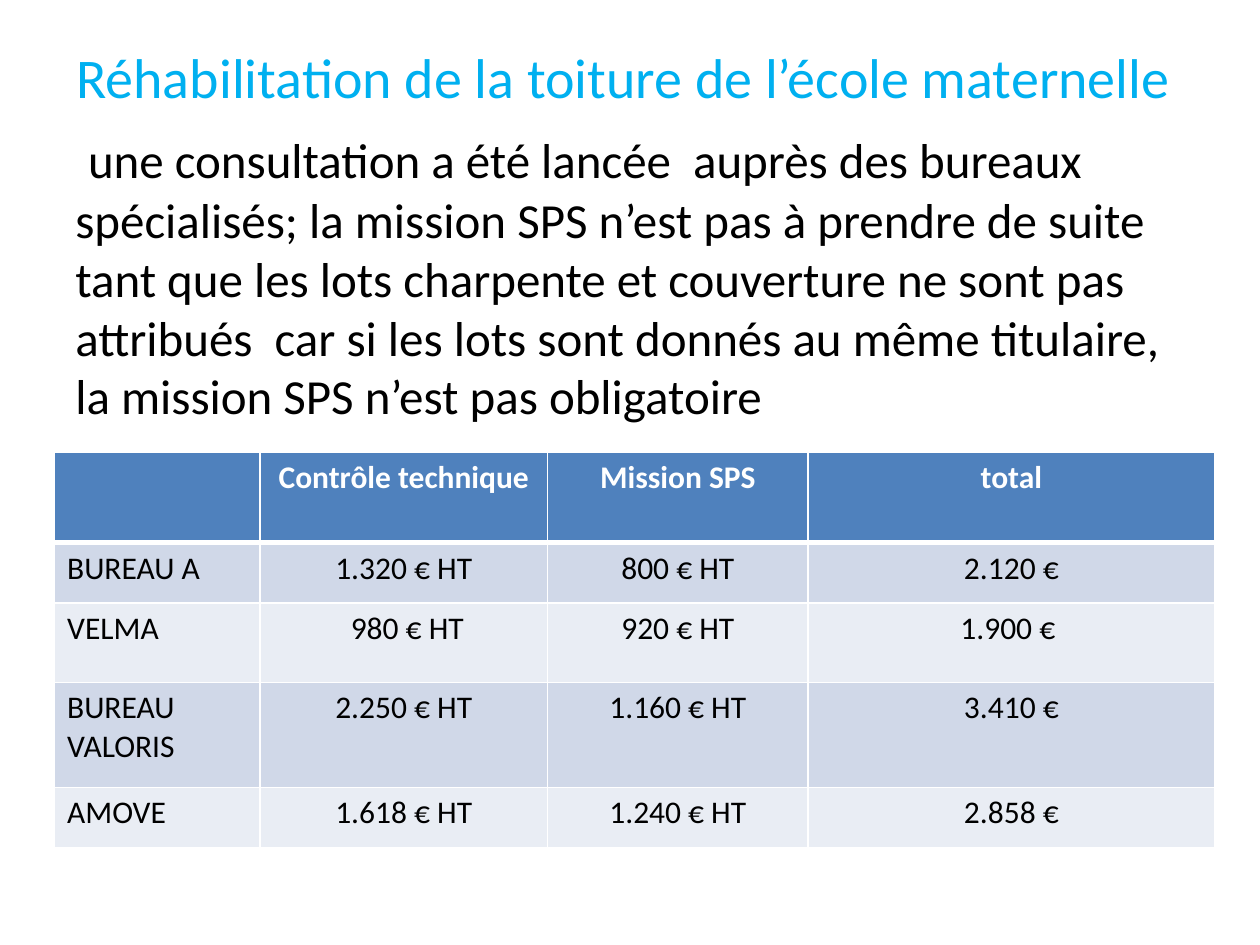
import pptx
import pptx.util
import pptx.dml.color
import pptx.enum.text
import lxml.etree
from pptx.oxml.ns import qn

Cm = pptx.util.Cm
Pt = pptx.util.Pt
Color = pptx.dml.color.RGBColor
Align = pptx.enum.text.PP_ALIGN
Anchor = pptx.enum.text.MSO_ANCHOR

SKY = Color(0x00, 0xB0, 0xF0)
BLUE = Color(0x4F, 0x81, 0xBD)
BANDS = Color(0xD0, 0xD8, 0xE8), Color(0xE9, 0xED, 0xF4)
BLACK = Color(0, 0, 0)
WHITE = Color(0xFF, 0xFF, 0xFF)

TITLE = "Réhabilitation de la toiture de l’école maternelle "
BODY = (
    "une consultation a été lancée  auprès des bureaux spécialisés; "
    "la mission SPS n’est pas à prendre de suite tant que les lots "
    "charpente et couverture ne sont pas attribués  car si les lots sont "
    "donnés au même titulaire, la mission SPS n’est pas obligatoire"
)
OFFERS = [
    ["", "Contrôle technique", "Mission SPS", "total"],
    ["BUREAU A", "1.320 € HT", "800 € HT", "2.120 €"],
    ["VELMA", " 980 € HT", "920 € HT", "1.900 € "],
    ["BUREAU VALORIS", "2.250 € HT", "1.160 € HT", "3.410 €"],
    ["AMOVE", "1.618 € HT", "1.240 € HT", "2.858 €"],
]
WIDTHS = [4.14, 5.8, 5.25, 8.2]
HEIGHTS = [1.82, 1.22, 1.6, 2.11, 1.22]


class Deck:
    font = "Calibri"

    def __init__(self, slide):
        self.slide = slide

    def style(self, para, size, color, align=Align.LEFT, bold=False):
        para.alignment = align
        font = para.font
        font.name, font.bold = self.font, bold
        font.color.rgb = color
        if size:
            font.size = Pt(size)

    def text(self, box, runs, color, align=Align.LEFT, anchor=Anchor.TOP):
        """Add a text box; runs are pairs of wording and point size."""
        frame = self.slide.shapes.add_textbox(*map(Cm, box)).text_frame
        frame.word_wrap = True
        frame.vertical_anchor = anchor
        para = frame.paragraphs[0]
        self.style(para, None, color, align)
        for words, size in runs:
            run = para.add_run()
            run.text = words
            run.font.size = Pt(size)

    def edge(self, cell, side, width):
        props = cell._tc.get_or_add_tcPr()
        line = lxml.etree.SubElement(props, qn("a:ln" + side), w=str(Pt(width)))
        fill = lxml.etree.SubElement(line, qn("a:solidFill"))
        lxml.etree.SubElement(fill, qn("a:srgbClr"), val=str(WHITE))

    def table(self, left, top, rows, widths, heights):
        grid = self.slide.shapes.add_table(
            len(rows), len(widths), Cm(left), Cm(top),
            Cm(sum(widths)), Cm(sum(heights))).table
        for col, width in zip(grid.columns, widths):
            col.width = Cm(width)
        for r, (row, height) in enumerate(zip(rows, heights)):
            grid.rows[r].height = Cm(height)
            head = r == 0
            for c, words in enumerate(row):
                cell = grid.cell(r, c)
                cell.text = words
                self.style(cell.text_frame.paragraphs[0], 18,
                           WHITE if head else BLACK,
                           Align.CENTER if c else Align.LEFT, head)
                # The rule under the header is thicker than the others.
                for side in "LRTB":
                    thick = (r, side) in ((0, "B"), (1, "T"))
                    self.edge(cell, side, 3 if thick else 1)
                cell.fill.solid()
                cell.fill.fore_color.rgb = BLUE if head else BANDS[(r - 1) % 2]


def main():
    show = pptx.Presentation()
    show.slide_width, show.slide_height = Cm(25.4), Cm(19.05)
    deck = Deck(show.slides.add_slide(show.slide_layouts[6]))
    deck.text((1.27, 0.33, 22.86, 2.39), [(TITLE, 32)], SKY,
              Align.CENTER, Anchor.MIDDLE)
    deck.text((1.27, 2.34, 22.86, 14.68), [(" ", 32), (BODY, 28)], BLACK)
    deck.table(1.1, 9.12, OFFERS, WIDTHS, HEIGHTS)
    show.save("out.pptx")


if __name__ == "__main__":
    main()
